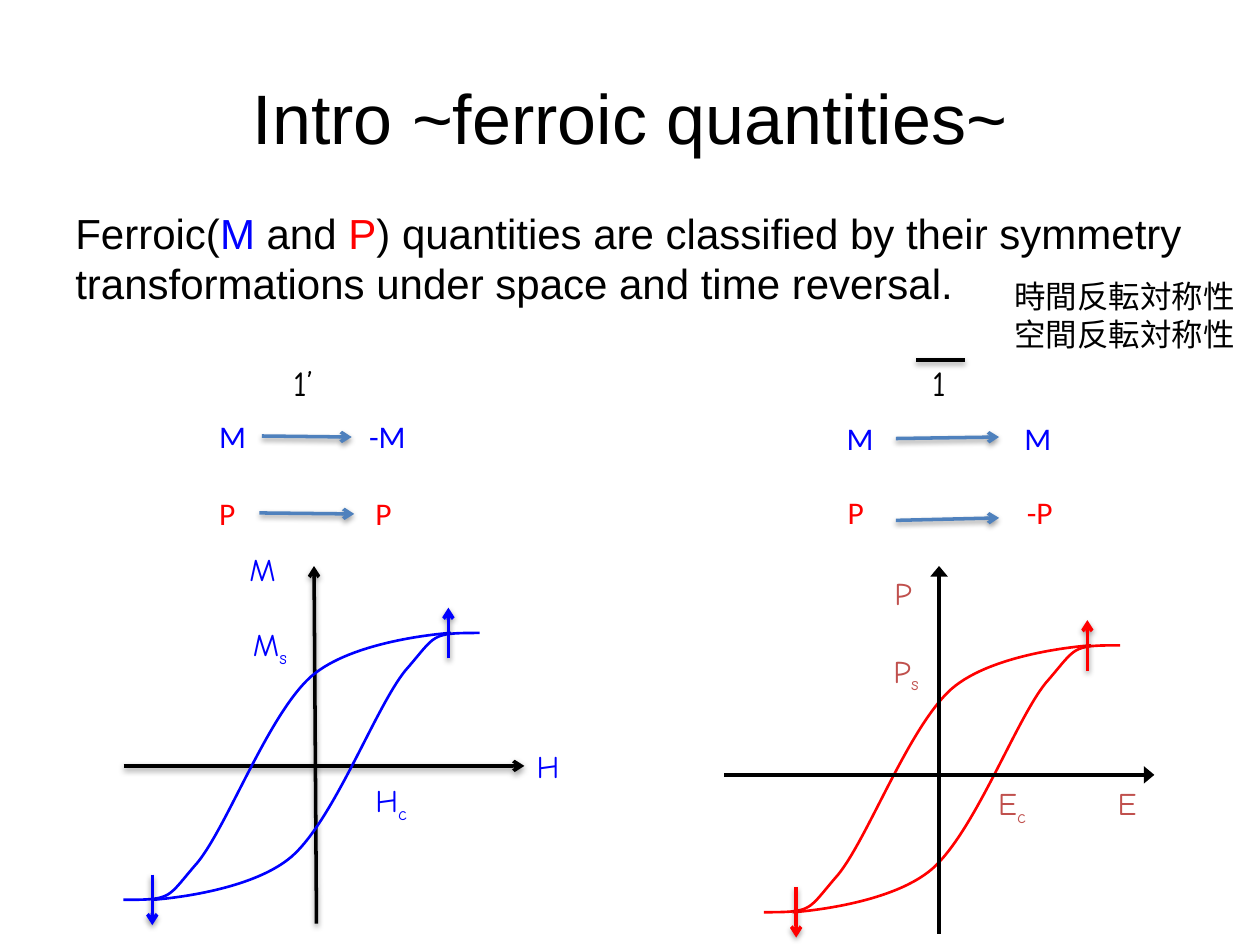
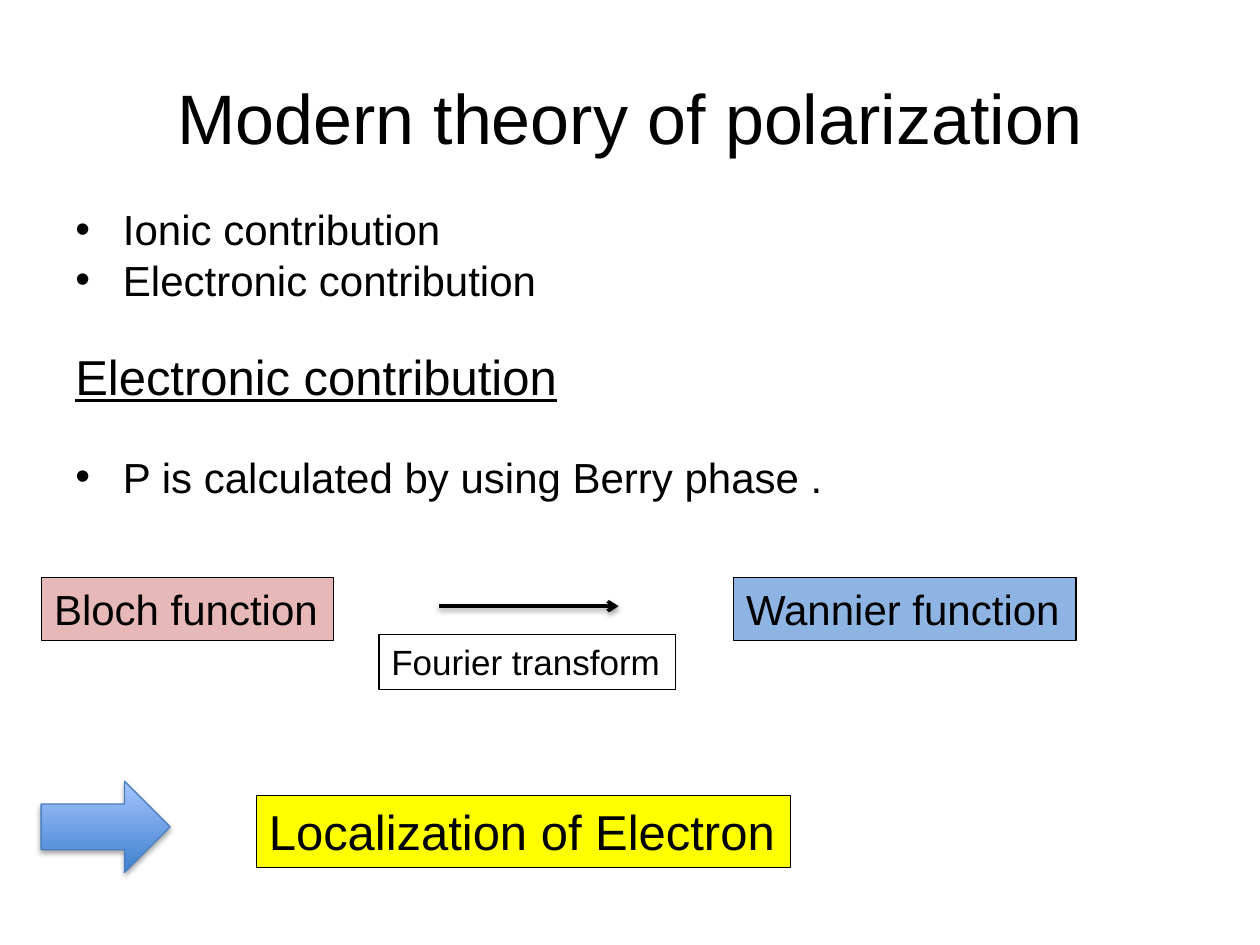
from lxml import etree
from pptx import Presentation
from pptx.dml.color import RGBColor
from pptx.enum.shapes import MSO_CONNECTOR, MSO_SHAPE
from pptx.enum.text import MSO_ANCHOR, MSO_AUTO_SIZE, PP_ALIGN
from pptx.oxml.ns import qn
from pptx.util import Cm, Pt

LINE, BLOCK = MSO_CONNECTOR.STRAIGHT, MSO_SHAPE.RIGHT_ARROW
MIDDLE, CENTER = MSO_ANCHOR.MIDDLE, PP_ALIGN.CENTER
GROW, FIXED = MSO_AUTO_SIZE.SHAPE_TO_FIT_TEXT, MSO_AUTO_SIZE.NONE

BLACK, BLUE, RED, BRICK, STEEL = "000000", "0000FF", "FF0000", "C0504D", "4F81BD"
BODY, HAND, SANS = "Arial", "Comic Neue", "Calibri"
TITLE = (1.27, 0.76, 22.86, 3.18)
OPEN = {"type": "arrow"}
SOLID = {"type": "triangle", "w": "lg", "len": "med"}

# All places are in centimetres: left, top, width, height or x1, y1, x2, y2.
INTRO = [("Ferroic(", BLACK), ("M", BLUE), (" and ", BLACK), ("P", RED),
         (") quantities are classified by their symmetry "
          "transformations under space and time reversal.", BLACK)]
TERMS = ["時間反転対称性", "空間反転対称性"]

SIGNS = [("1’", 5.66), ("1", 18.54)]
BAR = (18.47, 7.26, 19.46, 7.26)
TINTS = {"M": BLUE, "P": RED}
WIDTHS = {"M": 1.04, "-M": 1.27, "P": 0.94, "-P": 1.14}
# from, left, to, left, top, arrow
MAPS = [
    ("M", 4.17, "-M", 7.19, 8.28, (5.28, 8.79, 7.09, 8.81)),
    ("P", 4.17, "P", 7.32, 9.83, (5.23, 10.34, 7.14, 10.36)),
    ("M", 16.82, "M", 20.4, 8.33, (18.06, 8.84, 20.14, 8.81)),
    ("P", 16.84, "-P", 20.45, 9.82, (18.06, 10.49, 20.14, 10.44)),
]

# One branch of the loop as cubic Bezier points from its lower end;
# the other branch is the same turned by 180 degrees.
BRANCH = [(0, 0), (1.02, 0), (0.86, -0.03), (1.5, -0.76),
          (2.11, -1.52), (2.92, -3.73), (3.78, -4.5),
          (4.65, -5.26), (6.6, -5.38), (6.6, -5.38)]
SPAN, RISE, TICK = 7.18, 5.38, 0.51
LOOPS = [
    {"start": (2.49, 18.14), "ink": BLUE, "text": BLUE,
     "head": OPEN, "shadow": True, "ticks": (0.58, 6.55),
     "axes": [(2.49, 15.44, 10.57, 15.44), (6.38, 18.62, 6.33, 11.41)],
     "labels": [("M", "", 4.78, 10.97, 1.07), ("H", "", 10.57, 14.94, 1.02),
                ("M", "s", 4.85, 12.47, 1.3), ("H", "c", 7.32, 15.62, 1.22)]},
    {"start": (15.4, 18.39), "ink": RED, "text": BRICK,
     "head": SOLID, "shadow": False, "ticks": (0.65, 6.52),
     "axes": [(14.6, 15.62, 23.27, 15.62), (18.93, 18.82, 18.93, 11.41)],
     "labels": [("P", "", 17.78, 11.45, 0.84), ("E", "", 22.28, 15.68, 0.91),
                ("P", "s", 17.76, 13.01, 1.07), ("E", "c", 19.87, 15.68, 1.14)]},
]

LISTS = [
    (["Ionic contribution", "Electronic contribution"], (1.27, 3.98, 22.4, 2.31)),
    (["P is calculated by using Berry phase ."], (1.27, 8.97, 22.4, 1.27)),
]
# text, place, size, fill, wrap
BOXES = [
    ("Bloch function", (0.84, 11.64, 5.89, 1.28), 24, "E6B9B8", False),
    ("Wannier function", (14.79, 11.64, 6.9, 1.28), 24, "8EB4E3", False),
    ("Fourier transform", (7.64, 12.79, 5.98, 1.11), 20, None, False),
    ("Localization of Electron", (5.17, 16.04, 10.77, 1.45), 28, "FFFF00", True),
]


def rgb(code):
    return RGBColor.from_string(code)


def cms(place):
    return [Cm(n) for n in place]


def shade(shape, alpha, dist):
    """Give the shape a soft shadow straight below it, or none if alpha is 0."""
    props = shape._element.spPr
    effects = props.find(qn("a:effectLst"))
    if effects is None:
        effects = etree.SubElement(props, qn("a:effectLst"))
    if alpha:
        drop = etree.SubElement(effects, qn("a:outerShdw"), blurRad="40000",
                                dist=str(dist), dir="5400000", rotWithShape="0")
        tint = etree.SubElement(drop, qn("a:srgbClr"), val=BLACK)
        etree.SubElement(tint, qn("a:alpha"), val=str(alpha * 1000))


def add_line(slide, ends, color, head=None, shadow=True):
    line = slide.shapes.add_connector(LINE, *cms(ends))
    line.line.color.rgb = rgb(color)
    line.line.width = Pt(2)
    if head:
        etree.SubElement(line.line._get_or_add_ln(), qn("a:tailEnd"), head)
    shade(line, 38 if shadow else 0, 20000)


def style(run, font, size, color):
    run.font.name = font
    run.font.size = Pt(size)
    run.font.color.rgb = rgb(color)


def add_text(slide, text, place, size, font=BODY, color=BLACK, wrap=False):
    """Add a text box; text is one string, with a line break for each paragraph."""
    box = slide.shapes.add_textbox(*cms(place))
    frame = box.text_frame
    frame.text = text
    frame.word_wrap = wrap
    frame.auto_size = GROW
    for para in frame.paragraphs:
        for run in para.runs:
            style(run, font, size, color)
    return box


def add_title(slide, text):
    frame = add_text(slide, text, TITLE, 40, wrap=True).text_frame
    frame.auto_size = FIXED
    frame.vertical_anchor = MIDDLE
    frame.paragraphs[0].alignment = CENTER


def add_list(slide, items, place):
    box = add_text(slide, "\n".join(items), place, 24, wrap=True)
    for para in box.text_frame.paragraphs:
        props = para._p.get_or_add_pPr()
        props.set("marL", str(Cm(0.96)))
        props.set("indent", str(-Cm(0.96)))
        etree.SubElement(props, qn("a:buFont"), typeface=BODY)
        etree.SubElement(props, qn("a:buChar"), char="•")


def add_curve(slide, points, color):
    """Draw a chain of cubic Bezier curves: a start, then three points for each."""
    first, *rest = [cms(p) for p in points]
    pen = slide.shapes.build_freeform(*first)
    pen.add_line_segments(rest, close=False)
    curve = pen.convert_to_shape()
    legs = list(curve._element.iter(qn("a:lnTo")))
    for i in range(0, len(legs), 3):
        bend = etree.Element(qn("a:cubicBezTo"))
        legs[i].addprevious(bend)
        for leg in legs[i:i + 3]:
            bend.append(leg[0])
            leg.getparent().remove(leg)
    curve.shadow.inherit = False
    curve.fill.background()
    curve.line.color.rgb = rgb(color)
    curve.line.width = Pt(1.5)


def add_axes(slide, loop):
    for axis in loop["axes"]:
        add_line(slide, axis, BLACK, loop["head"], loop["shadow"])


def add_branches(slide, loop):
    x, y = loop["start"]
    add_curve(slide, [(x + dx, y + dy) for dx, dy in BRANCH], loop["ink"])
    add_curve(slide, [(x + SPAN - dx, y - RISE - dy) for dx, dy in BRANCH],
              loop["ink"])


def add_loop(slide, loop):
    layers = [add_axes, add_branches]
    if not loop["shadow"]:
        layers.reverse()
    for layer in layers:
        layer(slide, loop)

    x, y = loop["start"]
    low, high = (x + dx for dx in loop["ticks"])
    top = y - RISE
    add_line(slide, (low, y - TICK, low, y + TICK), loop["ink"], OPEN)
    add_line(slide, (high, top + TICK, high, top - TICK), loop["ink"], OPEN)

    for name, sub, left, up, width in loop["labels"]:
        box = add_text(slide, name, (left, up, width, 1.02), 18, HAND, loop["text"])
        if sub:
            run = box.text_frame.paragraphs[0].add_run()
            run.text = sub
            style(run, HAND, 18, loop["text"])
            run._r.get_or_add_rPr().set("baseline", "-25000")


def build_intro(slide):
    add_title(slide, "Intro ~ferroic quantities~")
    for loop in LOOPS:
        add_loop(slide, loop)
    for sign, left in SIGNS:
        add_text(slide, sign, (left, 7.17, 1.35, 1.11), 20, HAND, wrap=True)
    add_line(slide, BAR, BLACK)
    for old, left, new, right, top, arrow in MAPS:
        for name, x in ((old, left), (new, right)):
            add_text(slide, name, (x, top, WIDTHS[name], 1.02), 18, SANS,
                     TINTS[name[-1]])
        add_line(slide, arrow, STEEL, OPEN)

    box = add_text(slide, "", (1.27, 4.05, 23.65, 2.31), 24, wrap=True)
    for text, color in INTRO:
        run = box.text_frame.paragraphs[0].add_run()
        run.text = text
        style(run, BODY, 24, color)
    add_text(slide, "\n".join(TERMS), (20.2, 5.46, 5, 1.8), 18, SANS)


def build_theory(slide):
    add_title(slide, "Modern theory of polarization")
    for items, place in LISTS:
        add_list(slide, items, place)
    head = add_text(slide, "Electronic contribution", (1.27, 6.86, 10.34, 1.45), 28)
    head.text_frame.paragraphs[0].runs[0].font.underline = True

    for text, place, size, fill, wrap in BOXES:
        box = add_text(slide, text, place, size, wrap=wrap)
        box.line.color.rgb = rgb(BLACK)
        box.line.width = Pt(0.75)
        if fill:
            box.fill.solid()
            box.fill.fore_color.rgb = rgb(fill)
    add_line(slide, (8.84, 12.22, 12.47, 12.22), BLACK, OPEN)

    block = slide.shapes.add_shape(BLOCK, *cms((0.83, 15.75, 2.6, 1.84)))
    block.fill.gradient()
    block.fill.gradient_angle = 90
    for stop, color in zip(block.fill.gradient_stops, ("3F80CE", "A4C4FF")):
        stop.color.rgb = rgb(color)
    block.line.color.rgb = rgb("4B7EBC")
    block.line.width = Pt(0.75)
    block.shadow.inherit = False
    shade(block, 35, 23000)


def main():
    deck = Presentation()
    deck.slide_width, deck.slide_height = Cm(25.4), Cm(19.05)
    for build in (build_intro, build_theory):
        build(deck.slides.add_slide(deck.slide_layouts[6]))
    deck.save("out.pptx")


if __name__ == "__main__":
    main()
